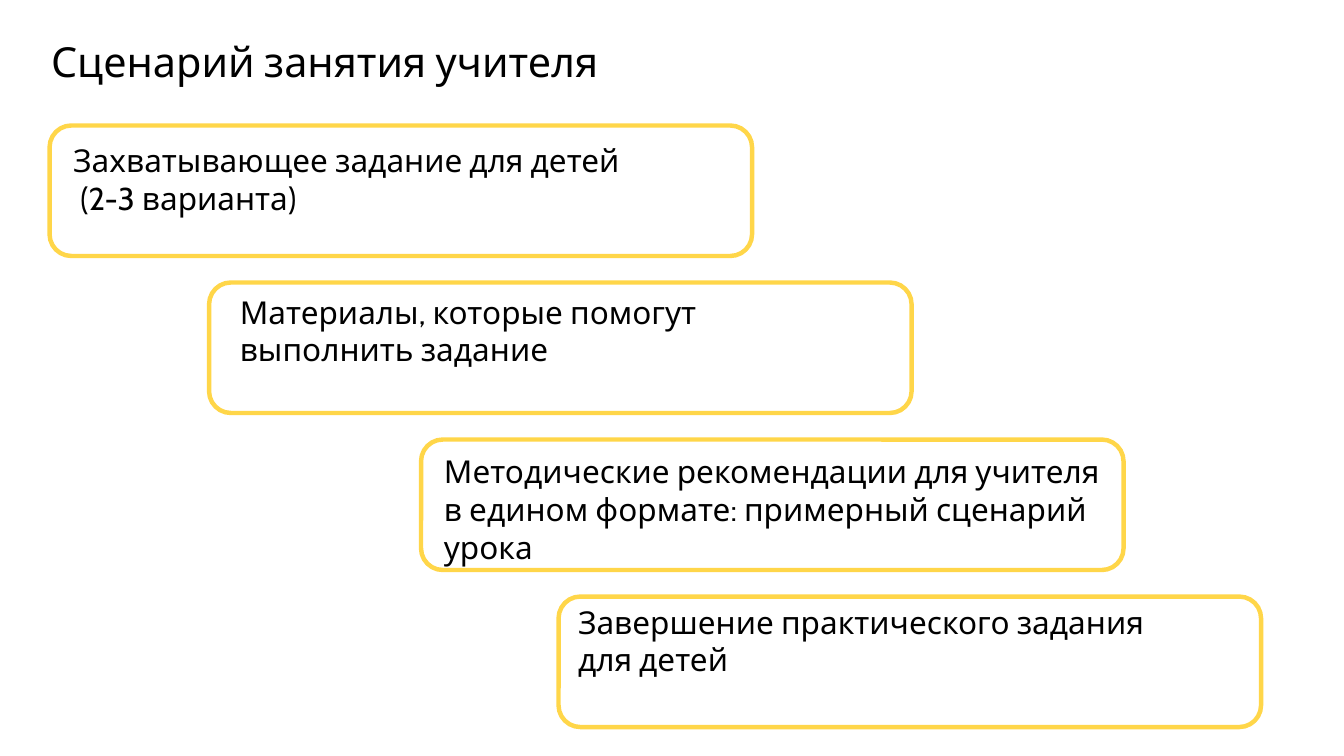
from dataclasses import dataclass

from pptx import Presentation
from pptx.dml.color import RGBColor
from pptx.enum.shapes import MSO_SHAPE as Shape
from pptx.enum.text import MSO_ANCHOR as Anchor, MSO_AUTO_SIZE as AutoSize, PP_ALIGN as Align
from pptx.util import Inches, Pt

BLACK = RGBColor(0x00, 0x00, 0x00)
YELLOW = RGBColor(0xFF, 0xD6, 0x49)
FONT = "Cabin"

# Positions and sizes are percentages of the slide's width and height.
FRAME_TOP, FRAME_STEP = 16.6, 20.77
FRAME_W, FRAME_H = 52.27, 17.26


@dataclass(frozen=True)
class Box:
    x: float
    y: float
    w: float
    h: float


@dataclass(frozen=True)
class Step:
    frame_x: float
    caption: Box
    lines: tuple[str, ...]


TITLE_BOX = Box(3.8, 3.19, 92.41, 10.32)
STEPS = (
    Step(3.69, Box(4.43, 14.54, 53.8, 18.2),
         ("Захватывающее задание для детей", " (2-3 варианта)")),
    Step(15.56, Box(16.82, 34.43, 47.68, 18.57),
         ("Материалы, которые помогут выполнить задание",)),
    Step(31.33, Box(31.75, 53.38, 52.27, 27.95),
         ("Методические рекомендации для учителя",
          "в едином формате: примерный сценарий урока")),
    Step(41.56, Box(41.98, 75.42, 48, 18.57),
         ("Завершение практического задания для детей",)),
)


def to_emu(prs, box: Box) -> tuple[int, int, int, int]:
    """Turn percentages of the slide into left, top, width and height."""
    w, h = prs.slide_width, prs.slide_height
    return (round(w * box.x / 100), round(h * box.y / 100),
            round(w * box.w / 100), round(h * box.h / 100))


def add_run(p, text: str, size: float) -> None:
    p.alignment = Align.LEFT
    r = p.add_run()
    r.text = text
    r.font.name = FONT
    r.font.size = Pt(size)
    r.font.color.rgb = BLACK


def add_round_box(prs, slide, box: Box):
    sp = slide.shapes.add_shape(Shape.ROUNDED_RECTANGLE, *to_emu(prs, box))
    sp.shadow.inherit = False
    sp.fill.background()
    sp.line.fill.background()
    return sp


def add_caption(prs, slide, step: Step) -> None:
    tf = add_round_box(prs, slide, step.caption).text_frame
    tf.word_wrap = True
    tf.vertical_anchor = Anchor.MIDDLE
    for i, line in enumerate(step.lines):
        p = tf.add_paragraph() if i else tf.paragraphs[0]
        add_run(p, line, 32)


def add_frame(prs, slide, x: float, row: int) -> None:
    box = Box(x, FRAME_TOP + row * FRAME_STEP, FRAME_W, FRAME_H)
    sp = add_round_box(prs, slide, box)
    sp.line.color.rgb = YELLOW
    sp.line.width = Pt(4.5)


def fill_title(prs, slide, text: str) -> None:
    sp = slide.shapes.title
    sp.left, sp.top, sp.width, sp.height = to_emu(prs, TITLE_BOX)
    tf = sp.text_frame
    tf.auto_size = AutoSize.NONE
    tf.word_wrap = True
    tf.vertical_anchor = Anchor.TOP
    tf.margin_left = tf.margin_bottom = 0
    tf.margin_top, tf.margin_right = Inches(0.2), Inches(0.79)
    p = tf.paragraphs[0]
    p.line_spacing = Pt(48)
    add_run(p, text, 42)


def main() -> None:
    prs = Presentation()
    prs.slide_width, prs.slide_height = Inches(18.96), Inches(10.66)
    slide = prs.slides.add_slide(prs.slide_layouts[5])
    fill_title(prs, slide, "Сценарий занятия учителя")
    for row, step in enumerate(STEPS):
        add_caption(prs, slide, step)
        add_frame(prs, slide, step.frame_x, row)
    prs.save("out.pptx")


if __name__ == "__main__":
    main()
